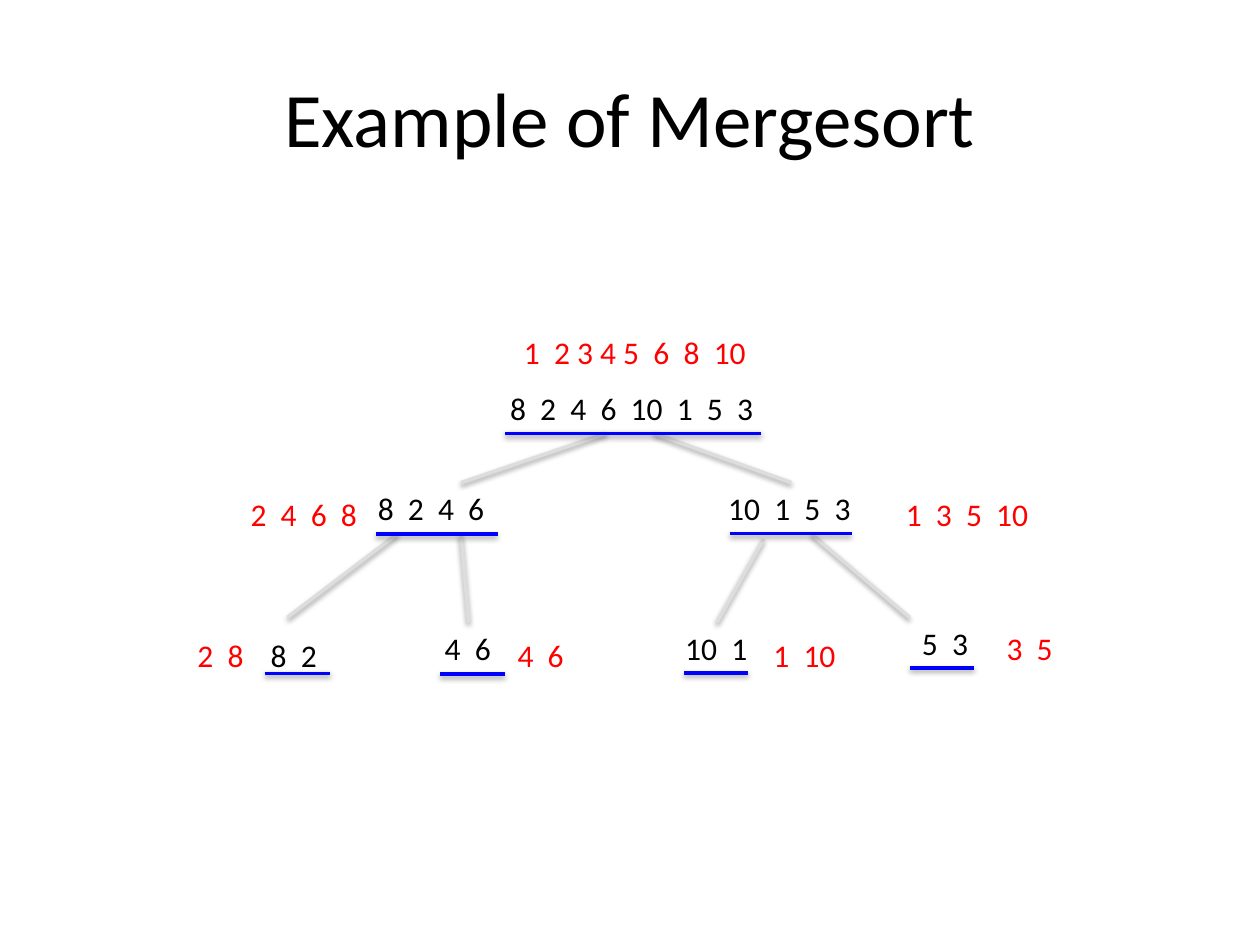
"""Build a slide showing a mergesort tree with each list unsorted and sorted."""
import pptx
import pptx.dml.color
import pptx.enum.shapes
import pptx.enum.text
import pptx.oxml
import pptx.oxml.ns
import pptx.util

Pt = pptx.util.Pt
TITLE = "Example of Mergesort"
BLACK, RED, BLUE, GREY = "000000", "FF0000", "0000FF", "DDDDDD"
LABEL_HEIGHT = 29

# text, left, top, width
UNSORTED = [
    ("8  2  4  6  10  1  5  3", 284.4, 219, 154.8),
    ("8  2  4  6", 208.8, 275.8, 76.3),
    ("10  1  5  3", 409, 275.8, 85),
    ("8  2", 147.6, 360, 41),
    ("4  6", 247, 355.7, 41),
    ("10  1", 384.5, 355.7, 50.4),
    ("5  3", 519.8, 352.8, 41),
]
SORTED = [
    ("1  2 3 4 5  6  8  10", 292.3, 186.5, 142.6),
    ("2  4  6  8", 136.1, 279.4, 78.5),
    ("1  3  5  10", 510.5, 279.4, 85),
    ("2  8", 105.8, 360, 41),
    ("4  6", 288.7, 360, 41),
    ("1  10", 434.9, 360, 50.4),
    ("3  5", 568.1, 355.7, 41),
]
# left, right, height on the slide
UNDERLINES = [
    (288.7, 434.9, 247.7),
    (214.6, 284.4, 305.2),
    (416.9, 486.7, 305),
    (151.2, 188.6, 384.8),
    (251.3, 288.7, 385.2),
    (391, 427.7, 384.5),
    (519.8, 556.6, 381.6),
]
# parent x, parent y, child x, child y
BRANCHES = [
    (346.3, 247.7, 263.5, 275.8),
    (373.7, 247.7, 452.2, 275.8),
    (226.8, 305.3, 164.2, 352.8),
    (263.5, 305.3, 267.8, 355.7),
    (436.3, 308.2, 409.7, 355.7),
    (463.7, 305.3, 519.8, 352.8),
]
SHADOW = (
    f'<a:effectLst {pptx.oxml.ns.nsdecls("a")}>'
    '<a:outerShdw blurRad="40000" dist="20000" dir="5400000" rotWithShape="0">'
    '<a:srgbClr val="000000"><a:alpha val="38000"/></a:srgbClr>'
    '</a:outerShdw></a:effectLst>'
)


def color(value):
    return pptx.dml.color.RGBColor.from_string(value)


def add_text(slide, text, left, top, width, height, size, shade):
    box = slide.shapes.add_textbox(Pt(left), Pt(top), Pt(width), Pt(height))
    paragraph = box.text_frame.paragraphs[0]
    paragraph.text = text
    paragraph.font.name = "Calibri"
    paragraph.font.size = Pt(size)
    paragraph.font.color.rgb = color(shade)
    return box.text_frame


def add_label(slide, text, left, top, width, shade):
    frame = add_text(slide, text, left, top, width, LABEL_HEIGHT, 18, shade)
    frame.word_wrap = False
    frame.auto_size = pptx.enum.text.MSO_AUTO_SIZE.SHAPE_TO_FIT_TEXT


def add_line(slide, x1, y1, x2, y2, shade):
    line = slide.shapes.add_connector(
        pptx.enum.shapes.MSO_CONNECTOR.STRAIGHT, Pt(x1), Pt(y1), Pt(x2), Pt(y2))
    line.line.color.rgb = color(shade)
    line.line.width = Pt(2)
    line._element.spPr.append(pptx.oxml.parse_xml(SHADOW))


def main():
    deck = pptx.Presentation()
    deck.slide_width, deck.slide_height = Pt(720), Pt(540)
    slide = deck.slides.add_slide(deck.slide_layouts[6])

    heading = add_text(slide, TITLE, 36, 21.6, 648, 90, 44, BLACK)
    heading.word_wrap = True
    heading.vertical_anchor = pptx.enum.text.MSO_ANCHOR.MIDDLE
    heading.paragraphs[0].alignment = pptx.enum.text.PP_ALIGN.CENTER

    for numbers in UNSORTED:
        add_label(slide, *numbers, BLACK)
    for branch in BRANCHES:
        add_line(slide, *branch, GREY)
    for left, right, y in UNDERLINES:
        add_line(slide, left, y, right, y, BLUE)
    for numbers in SORTED:
        add_label(slide, *numbers, RED)

    deck.save("out.pptx")


if __name__ == "__main__":
    main()
